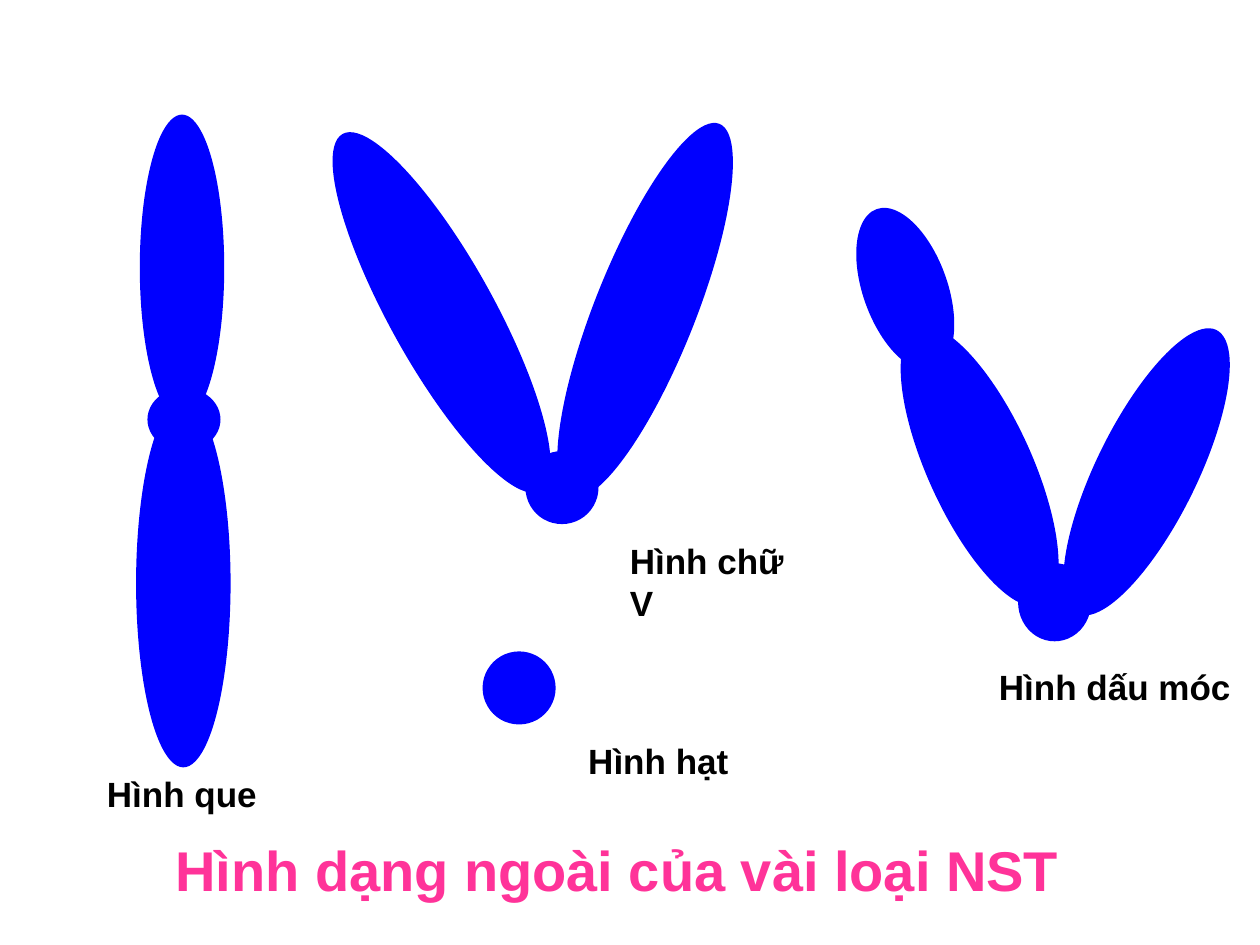
from dataclasses import dataclass

from pptx import Presentation
from pptx.dml.color import RGBColor
from pptx.enum.shapes import MSO_SHAPE
from pptx.enum.text import MSO_ANCHOR, MSO_AUTO_SIZE, PP_ALIGN
from pptx.util import Inches, Pt

COLS, ROWS = 100, 75


@dataclass(frozen=True)
class Theme:
    font: str = "Arial"
    body: str = "0000FF"
    label: str = "000000"
    title: str = "FF3399"
    label_size: int = 20
    title_size: int = 32


THEME = Theme()
prs = Presentation()
prs.slide_width, prs.slide_height = Inches(10), Inches(7.5)


def grid(x, y, w, h):
    col, row = prs.slide_width / COLS, prs.slide_height / ROWS
    return round(x * col), round(y * row), round(w * col), round(h * row)


def write(tf, text, *, size, color, wrap=False, inset=0.1):
    tf.word_wrap = wrap
    tf.auto_size = MSO_AUTO_SIZE.SHAPE_TO_FIT_TEXT
    tf.vertical_anchor = MSO_ANCHOR.TOP
    tf.margin_left = Inches(inset)
    p = tf.paragraphs[0]
    p.alignment = PP_ALIGN.LEFT
    r = p.add_run()
    r.text = text
    r.font.name = THEME.font
    r.font.size = Pt(size)
    r.font.bold = True
    r.font.color.rgb = RGBColor.from_string(color)


def add_oval(s, box, x, y, w, h, angle=0):
    sp = s.shapes.add_shape(MSO_SHAPE.OVAL, *grid(box[0] + x, box[1] + y, w, h))
    sp.rotation = angle
    sp.shadow.inherit = False
    sp.fill.solid()
    sp.fill.fore_color.rgb = RGBColor.from_string(THEME.body)
    sp.line.fill.background()


def add_label(s, box, text, x, y, w, h=4.4):
    sp = s.shapes.add_textbox(*grid(box[0] + x, box[1] + y, w, h))
    write(sp.text_frame, text, size=THEME.label_size, color=THEME.label)


def add_rod(s, box):
    add_oval(s, box, 0.3, 0, 6.7, 24.3)
    add_oval(s, box, 0.9, 21.7, 5.8, 5)
    add_oval(s, box, 0, 22.6, 7.5, 29.2)
    add_label(s, box, "Hình que", -3.3, 51.7, 13.9)


def add_v(s, box):
    add_oval(s, box, 0, 0, 8.3, 32.4, angle=331)
    add_oval(s, box, 16.3, 0.1, 8, 31.9, angle=21.7)
    add_oval(s, box, 10.8, 27.2, 5.8, 5.8)
    add_label(s, box, "Hình chữ V", 18.1, 33.7, 16.8)


def add_hook(s, box):
    add_oval(s, box, 0, 0, 6.7, 13.5, angle=340.3)
    add_oval(s, box, 5.1, 8.7, 8.3, 24.2, angle=335.6)
    add_oval(s, box, 18.5, 8.7, 8, 25.1, angle=26.2)
    add_oval(s, box, 12.3, 28.5, 5.8, 6.2)
    add_label(s, box, "Hình dấu móc", 9.8, 36.1, 20.6)


def add_grain(s, box):
    add_oval(s, box, 0, 0, 5.8, 5.8)
    add_label(s, box, "Hình hạt", 7.4, 6.5, 13.2)


def add_title(s, box):
    sp = s.shapes.title
    sp.left, sp.top, sp.width, sp.height = grid(*box)
    write(sp.text_frame, "Hình dạng ngoài của vài loại NST",
          size=THEME.title_size, color=THEME.title, wrap=True, inset=0.22)


def main():
    s = prs.slides.add_slide(prs.slide_layouts[5])
    add_title(s, (11.7, 65.8, 88.3, 6.3))
    add_rod(s, (10.8, 9.1))
    add_v(s, (30.9, 8.6))
    add_hook(s, (68.5, 16.2))
    add_grain(s, (38.3, 51.7))
    prs.save("out.pptx")


if __name__ == "__main__":
    main()
